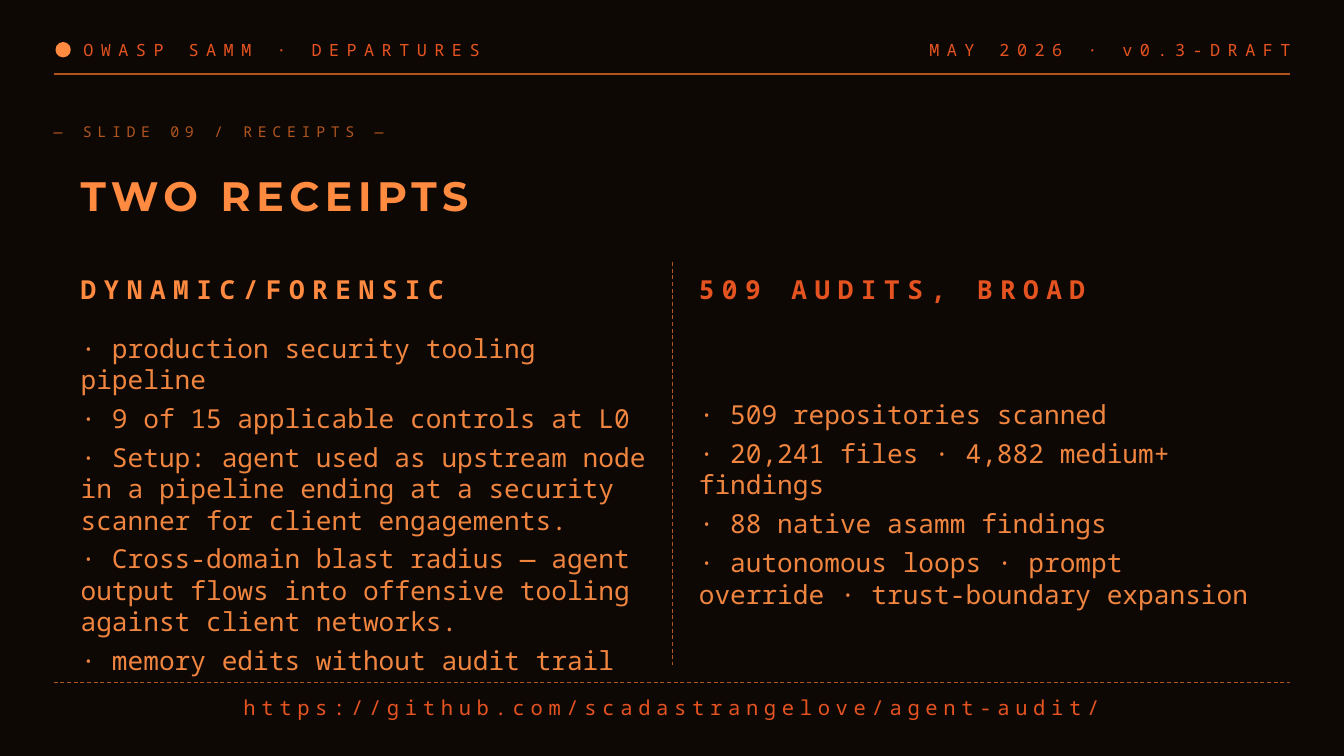
"""Build the "Two receipts" slide comparing two audits."""
from dataclasses import dataclass

import pptx
import pptx.dml.color
import pptx.enum.dml
import pptx.enum.shapes
import pptx.enum.text
import pptx.oxml.ns
import pptx.shapes.autoshape
import pptx.slide
import pptx.util
from lxml import etree

Inches = pptx.util.Inches
ALIGN = pptx.enum.text.PP_ALIGN

INK, BRIGHT, BODY, EMBER, RUST = "0E0805", "FF8A40", "F08540", "E55320", "B05520"
MONO, DISPLAY = "Noto Sans Mono", "Montserrat"
COLUMN_TOP = 1.95


@dataclass(frozen=True)
class Style:
    """Describe how a block of text looks."""
    size: float
    color: str
    tracking: float = 0
    bold: bool = False
    font: str = MONO
    align: ALIGN = ALIGN.LEFT
    space_after: float = 0


@dataclass(frozen=True)
class Label:
    """Hold a block of text with its place."""
    text: str
    box: tuple[float, float, float, float]
    style: Style


@dataclass(frozen=True)
class Rule:
    """Hold a straight line with its ends."""
    start: tuple[float, float]
    end: tuple[float, float]
    width: float
    dashed: bool = False


@dataclass(frozen=True)
class Receipt:
    """Hold one column of findings."""
    heading: str
    color: str
    left: float
    width: float
    findings: tuple[str, ...]


TITLE = Label("TWO RECEIPTS", (0.6, 1.2, 8.8, 0.5), Style(22, BRIGHT, 3, True, DISPLAY))
LABELS = (
    Label("OWASP SAMM · DEPARTURES", (0.62, 0.22, 5, 0.3), Style(9, EMBER, 4)),
    Label("MAY 2026 · v0.3-DRAFT", (5.6, 0.22, 4, 0.3), Style(9, EMBER, 4, align=ALIGN.RIGHT)),
    Label("— SLIDE 09 / RECEIPTS —", (0.4, 0.85, 5, 0.25), Style(8, RUST, 3)),
    Label("https://github.com/scadastrangelove/agent-audit/", (0.6, 5.11, 8.8, 0.3),
          Style(11, EMBER, 3, align=ALIGN.CENTER)),
)
RULES = (
    Rule((0.4, 0.55), (9.6, 0.55), 0.75),
    Rule((0.4, 5.08), (9.6, 5.08), 0.5, True),
    Rule((5, COLUMN_TOP), (5, 4.95), 0.5, True),
)
RECEIPTS = (
    Receipt("DYNAMIC/FORENSIC", BRIGHT, 0.6, 4.4, (
        "production security tooling pipeline",
        "9 of 15 applicable controls at L0",
        "Setup: agent used as upstream node in a pipeline ending at a security "
        "scanner for client engagements.",
        "Cross-domain blast radius — agent output flows into offensive tooling "
        "against client networks.",
        "memory edits without audit trail",
    )),
    Receipt("509 AUDITS, BROAD", EMBER, 5.2, 4.2, (
        "509 repositories scanned",
        "20,241 files · 4,882 medium+ findings",
        "88 native asamm findings",
        "autonomous loops · prompt override · trust-boundary expansion",
    )),
)


def rgb(value: str) -> pptx.dml.color.RGBColor:
    """Turn a hex string into a colour."""
    return pptx.dml.color.RGBColor.from_string(value)


def write(holder: pptx.shapes.autoshape.Shape, text: str, style: Style) -> None:
    """Fill a shape with text and format every run."""
    frame = holder.text_frame
    frame.text = text
    frame.word_wrap = True
    frame.auto_size = pptx.enum.text.MSO_AUTO_SIZE.NONE
    frame.vertical_anchor = pptx.enum.text.MSO_ANCHOR.MIDDLE
    frame.margin_left = frame.margin_right = frame.margin_top = frame.margin_bottom = 0
    for paragraph in frame.paragraphs:
        paragraph.alignment = style.align
        paragraph.space_after = pptx.util.Pt(style.space_after)
        for run in paragraph.runs:
            run.font.name = style.font
            run.font.size = pptx.util.Pt(style.size)
            run.font.bold = style.bold
            run.font.color.rgb = rgb(style.color)
            if style.tracking:
                run.font._element.set("spc", str(int(style.tracking * 100)))


def draw_label(slide: pptx.slide.Slide, label: Label) -> None:
    """Add a text box for a label."""
    write(slide.shapes.add_textbox(*map(Inches, label.box)), label.text, label.style)


def draw_title(slide: pptx.slide.Slide, label: Label) -> None:
    """Place and fill the title placeholder."""
    title = slide.shapes.title
    title.left, title.top, title.width, title.height = map(Inches, label.box)
    write(title, label.text, label.style)


def draw_rule(slide: pptx.slide.Slide, rule: Rule) -> None:
    """Add a plain or dashed line."""
    line = slide.shapes.add_connector(
        pptx.enum.shapes.MSO_CONNECTOR.STRAIGHT, *map(Inches, rule.start + rule.end))
    line.line.color.rgb = rgb(RUST)
    line.line.width = pptx.util.Pt(rule.width)
    if rule.dashed:
        line.line.dash_style = pptx.enum.dml.MSO_LINE.DASH
    etree.SubElement(line._element.spPr, pptx.oxml.ns.qn("a:effectLst"))


def draw_lamp(slide: pptx.slide.Slide) -> None:
    """Add the round lamp in the header."""
    lamp = slide.shapes.add_shape(
        pptx.enum.shapes.MSO_SHAPE.OVAL, *map(Inches, (0.42, 0.32, 0.1, 0.1)))
    lamp.shadow.inherit = False
    lamp.fill.solid()
    lamp.fill.fore_color.rgb = rgb(BRIGHT)
    lamp.line.color.rgb = rgb(BRIGHT)
    lamp.line.width = pptx.util.Pt(1)


def draw_receipt(slide: pptx.slide.Slide, receipt: Receipt) -> None:
    """Add a column heading and its findings."""
    draw_label(slide, Label(receipt.heading, (receipt.left, COLUMN_TOP, receipt.width, 0.4),
                            Style(14, receipt.color, 4, True)))
    findings = "\n".join(f"· {finding}" for finding in receipt.findings)
    draw_label(slide, Label(findings, (receipt.left, COLUMN_TOP + 0.45, receipt.width, 2.7),
                            Style(14, BODY, space_after=4)))


def main() -> None:
    """Build and save the presentation."""
    deck = pptx.Presentation()
    deck.slide_width, deck.slide_height = Inches(10), Inches(10 * 9 / 16)
    slide = deck.slides.add_slide(deck.slide_layouts.get_by_name("Title Only"))
    slide.background.fill.solid()
    slide.background.fill.fore_color.rgb = rgb(INK)
    draw_title(slide, TITLE)
    draw_lamp(slide)
    for rule in RULES:
        draw_rule(slide, rule)
    for label in LABELS:
        draw_label(slide, label)
    for receipt in RECEIPTS:
        draw_receipt(slide, receipt)
    deck.save("out.pptx")


if __name__ == "__main__":
    main()
